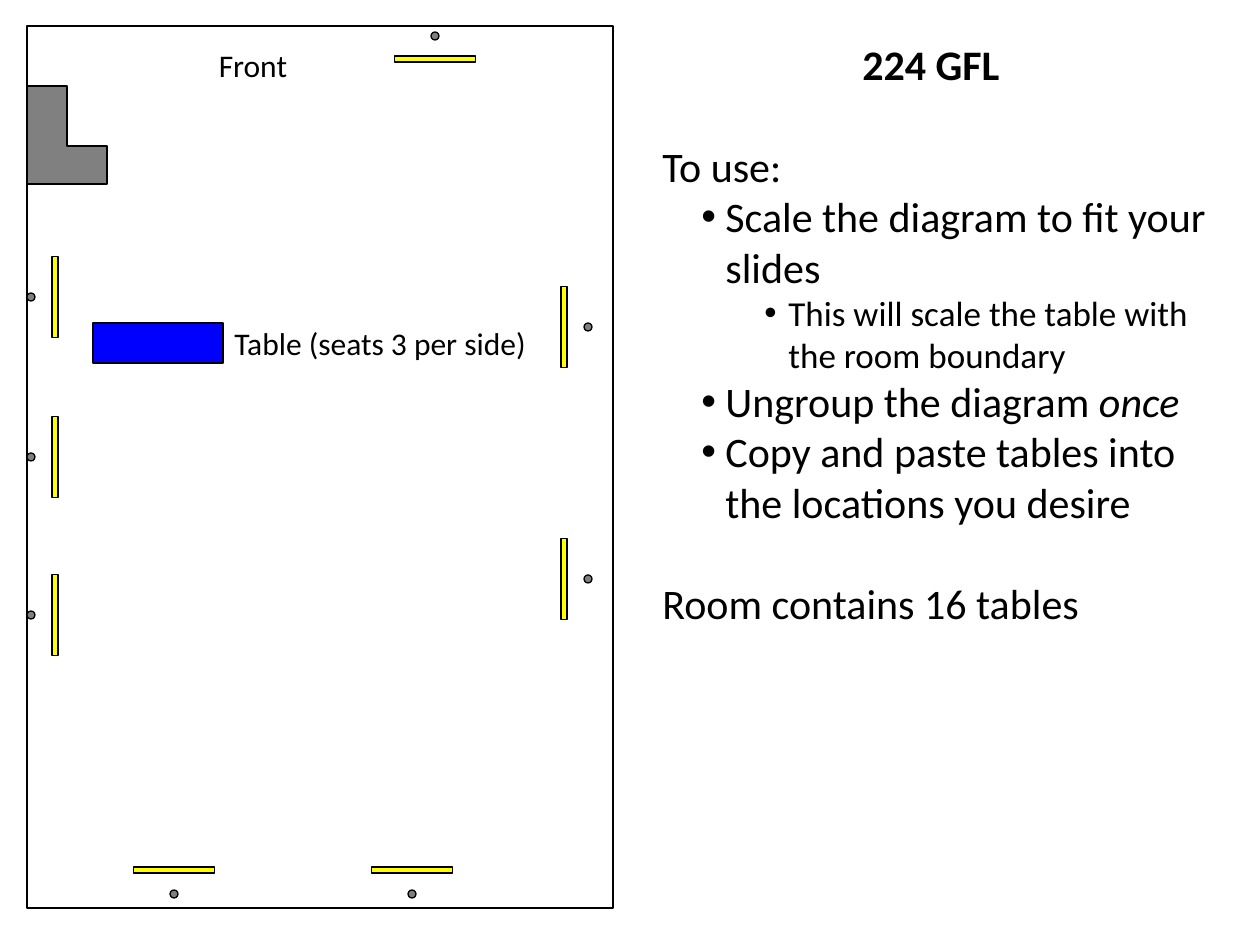
from lxml.etree import SubElement
from pptx import Presentation
from pptx.dml.color import RGBColor
from pptx.enum.shapes import MSO_SHAPE
from pptx.enum.text import MSO_ANCHOR, MSO_AUTO_SIZE, PP_ALIGN
from pptx.oxml.ns import qn
from pptx.util import Emu, Pt

BLACK = RGBColor(0, 0, 0)
DESK_GRAY = RGBColor(0x80, 0x80, 0x80)
DOT_GRAY = RGBColor(0x7F, 0x7F, 0x7F)
YELLOW = RGBColor(0xFF, 0xFF, 0)
BLUE = RGBColor(0, 0, 0xFF)
EMU_PER_PX = 914400 / 126
BAR_LENGTH, BAR_WIDTH, DOT_SIZE = 81, 6, 8


def place_outlined(shape, bounds, fill=None):
    shape.left, shape.top, shape.width, shape.height = [
        Emu(round(px * EMU_PER_PX)) for px in bounds]
    shape.shadow.inherit = False
    if fill is None:
        shape.fill.background()
    else:
        shape.fill.solid()
        shape.fill.fore_color.rgb = fill
    shape.line.color.rgb = BLACK
    shape.line.width = Pt(0.75)
    return shape


def write(box, bounds, paras, size=24, bold=False, align=PP_ALIGN.LEFT):
    """Place a box and fill it; each para is (spans, format), every second span italic."""
    box.left, box.top, box.width, box.height = [Emu(round(px * EMU_PER_PX)) for px in bounds]
    frame = box.text_frame
    frame.word_wrap = True
    frame.auto_size = MSO_AUTO_SIZE.SHAPE_TO_FIT_TEXT
    for index, (spans, style) in enumerate(paras):
        para = frame.paragraphs[0] if index == 0 else frame.add_paragraph()
        para.alignment = align
        para.level = style.get("level", 0)
        para.space_before = Pt(style.get("before", 0))
        if "margin" in style:
            properties = para._p.get_or_add_pPr()
            properties.set("marL", str(round(style["margin"] * EMU_PER_PX)))
            properties.set("indent", str(round(-24 * EMU_PER_PX)))
            SubElement(properties, qn("a:buFont"), typeface="Arial")
            SubElement(properties, qn("a:buChar"), char="•")
        for position, text in enumerate(spans):
            span = para.add_run()
            span.text = text
            span.font.name = "Calibri"
            span.font.size = Pt(style.get("size", size))
            span.font.bold = bold
            span.font.italic = position % 2 == 1
            span.font.color.rgb = BLACK
    return box


deck = Presentation()
deck.slide_width = Emu(round(1260 * EMU_PER_PX))
deck.slide_height = Emu(round(945 * EMU_PER_PX))
page = deck.slides.add_slide(deck.slide_layouts[5])
shapes = page.shapes

title = write(shapes.title, (650, 32, 562, 63), [(["224 GFL"], {})],
              bold=True, align=PP_ALIGN.CENTER)
title.text_frame.vertical_anchor = MSO_ANCHOR.TOP

# Room diagram, grouped below so that it scales together
walls = place_outlined(shapes.add_shape(MSO_SHAPE.RECTANGLE, 0, 0, 0, 0), (27, 26, 586, 882))
corner = shapes.build_freeform(27, 86, scale=EMU_PER_PX)
corner.add_line_segments([(67, 86), (67, 146), (107, 146), (107, 184), (27, 184)], close=True)
desk = place_outlined(corner.convert_to_shape(), (27, 86, 80, 98), DESK_GRAY)
room = [walls, desk]

# Centres of each yellow bar and of the dot beside it, wall by wall
pairs = [(55, y, 31, y) for y in (297, 457, 615)]
pairs += [(564, y, 588, y) for y in (327, 579)]
pairs += [(x, 870, x, 894) for x in (174, 412)]
pairs += [(435, 59, 435, 36)]
for bar_x, bar_y, dot_x, dot_y in pairs:
    width, height = (BAR_WIDTH, BAR_LENGTH) if bar_y == dot_y else (BAR_LENGTH, BAR_WIDTH)
    for kind, x, y, wide, high, fill in (
            (MSO_SHAPE.RECTANGLE, bar_x, bar_y, width, height, YELLOW),
            (MSO_SHAPE.OVAL, dot_x, dot_y, DOT_SIZE, DOT_SIZE, DOT_GRAY)):
        room.append(place_outlined(shapes.add_shape(kind, 0, 0, 0, 0),
                                   (x - wide / 2, y - high / 2, wide, high), fill))

room.append(place_outlined(shapes.add_shape(MSO_SHAPE.RECTANGLE, 0, 0, 0, 0),
                           (93, 323, 130, 40), BLUE))
room.append(write(shapes.add_textbox(0, 0, 0, 0), (222, 318, 354, 50),
                  [(["Table (seats 3 per side)"], {})], size=18))
room.append(write(shapes.add_textbox(0, 0, 0, 0), (134, 40, 238, 50),
                  [(["Front"], {})], size=18, align=PP_ALIGN.CENTER))
shapes.add_group_shape(room)

# Instructions
bullet = {"margin": 63}
sub_bullet = {"margin": 126, "level": 1, "size": 20}
write(shapes.add_textbox(0, 0, 0, 0), (650, 134, 576, 522), [
    (["To use:"], {}),
    (["Scale the diagram to fit your slides"], bullet),
    (["This will scale the table with the room boundary"], sub_bullet),
    (["Ungroup the diagram ", "once"], bullet),
    (["Copy and paste tables into the locations you desire"], bullet),
    (["Room contains 16 tables"], {"before": 29}),
])

deck.save("out.pptx")
